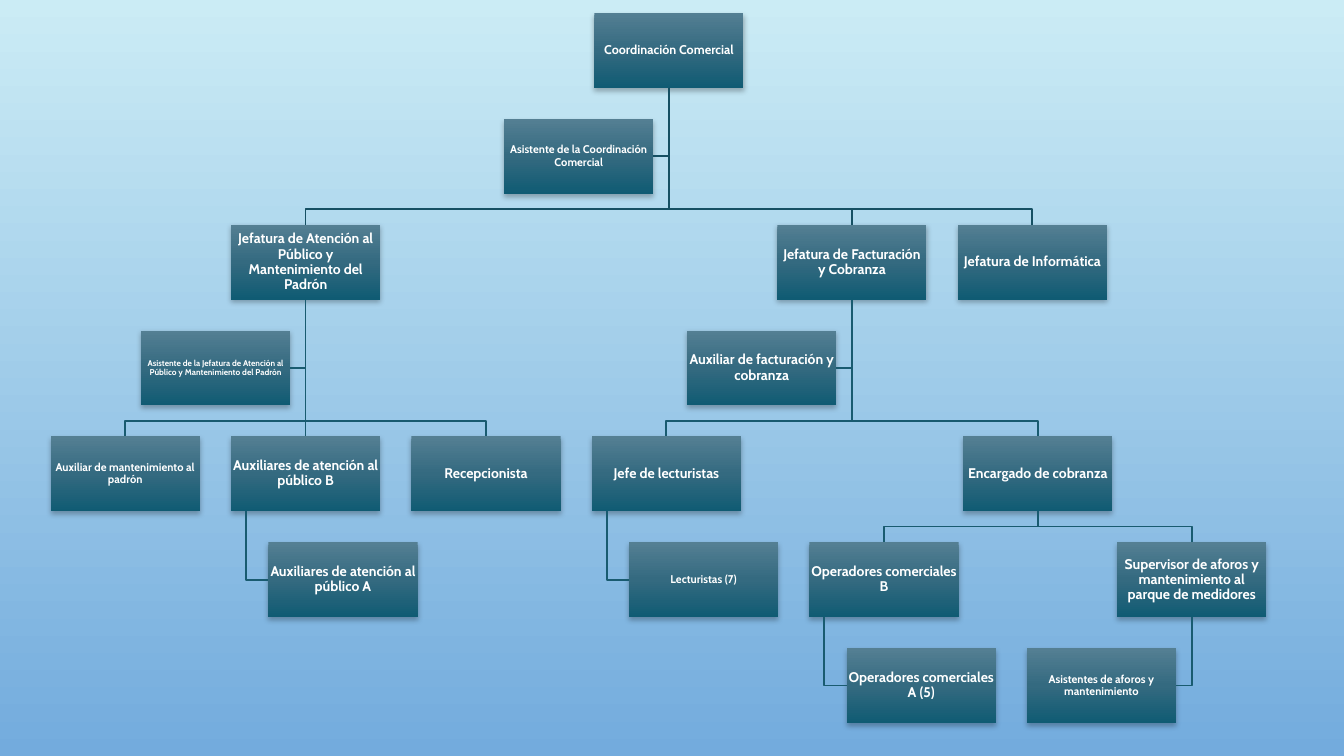
"""Build the organisation chart of the Coordinación Comercial on one slide."""
from copy import deepcopy

from lxml import etree
from pptx import Presentation
from pptx import util as u
from pptx.dml.color import RGBColor
from pptx.enum import shapes, text
from pptx.oxml.ns import qn


def rgb(code):
    """Turn a hex string into a colour."""
    return RGBColor.from_string(code)


def gradient(fill, element, stops):
    """Fill from top to bottom with (position, colour) stops."""
    fill.gradient()
    fill.gradient_angle = 270
    stop_list = element.find(".//" + qn("a:gsLst"))
    for _ in stops[2:]:
        stop_list.insert(1, deepcopy(stop_list[0]))
    for stop, (position, colour) in zip(fill.gradient_stops, stops):
        stop.position = position
        stop.color.rgb = rgb(colour)


class OrgChart:
    """Draw the posts of an organisation chart and the lines between them."""

    FONT = "Cabin"
    WIDTH, HEIGHT = u.Pt(106.6), u.Pt(53.4)
    ROW_STEP = u.Pt(75.6)
    AIDE_SHIFT = u.Pt(64.4)
    BEND = u.Pt(11.2)
    POST_STOPS = [(0, "547F93"), (0.5, "346A80"), (1, "105B73")]
    TOP_LINE, LINE = "165063", "195B70"

    def __init__(self, slide):
        """Keep the slide and paint its background."""
        self.slide = slide
        gradient(slide.background.fill, slide.element, [(0, "CBECF5"), (1, "73ABDD")])

    def post(self, label, left, top, size):
        """Draw one post with its label."""
        post = self.slide.shapes.add_shape(
            shapes.MSO_SHAPE.RECTANGLE, left, top, self.WIDTH, self.HEIGHT)
        gradient(post.fill, post.element, self.POST_STOPS)
        post.line.fill.background()
        self.shade(post)
        frame = post.text_frame
        frame.text = label
        frame.word_wrap = True
        frame.vertical_anchor = text.MSO_ANCHOR.MIDDLE
        frame.margin_left = frame.margin_right = u.Pt(0.7)
        frame.margin_top = frame.margin_bottom = u.Pt(0.7)
        paragraph = frame.paragraphs[0]
        paragraph.alignment = text.PP_ALIGN.CENTER
        paragraph.line_spacing = 0.9
        font = paragraph.runs[0].font
        font.name, font.size, font.bold = self.FONT, u.Pt(size), True
        font.color.rgb = rgb("FFFFFF")
        return post

    def shade(self, post):
        """Give a post a soft shadow below it."""
        post.shadow.inherit = False
        effects = post.element.spPr.find(qn("a:effectLst"))
        shadow = etree.SubElement(
            effects, qn("a:outerShdw"), blurRad=str(u.Pt(4)), dist=str(u.Pt(2)),
            dir="5400000", algn="ctr", rotWithShape="0")
        black = etree.SubElement(shadow, qn("a:srgbClr"), val="000000")
        etree.SubElement(black, qn("a:alpha"), val="28000")

    def stroke(self, line, colour):
        """Style a line of the chart."""
        line.color.rgb = rgb(colour)
        line.width = u.Pt(1.25)

    def bent_line(self, colour, start, *corners):
        """Draw an open line through the given points."""
        builder = self.slide.shapes.build_freeform(*start)
        builder.add_line_segments(corners, close=False)
        branch = builder.convert_to_shape()
        branch.fill.background()
        branch.shadow.inherit = False
        self.stroke(branch.line, colour)

    def straight_line(self, colour, chief, post):
        """Join a chief to the post directly below."""
        link = self.slide.shapes.add_connector(shapes.MSO_CONNECTOR.STRAIGHT, 0, 0, 0, 0)
        link.begin_connect(chief, 2)
        link.end_connect(post, 0)
        self.stroke(link.line, colour)
        etree.SubElement(link.element.spPr, qn("a:effectLst"))

    def report(self, chief, label, left, rows=2, size=10, colour=LINE):
        """Place a post some rows below its chief."""
        post = self.post(label, u.Pt(left), chief.top + rows * self.ROW_STEP, size)
        chief_x = chief.left + self.WIDTH // 2
        post_x = post.left + self.WIDTH // 2
        if chief_x == post_x:
            self.straight_line(colour, chief, post)
        else:
            bend_y = post.top - self.BEND
            self.bent_line(colour, (chief_x, chief.top + self.HEIGHT),
                           (chief_x, bend_y), (post_x, bend_y), (post_x, post.top))
        return post

    def aide(self, chief, label, size=10, colour=LINE):
        """Place an assistant to the left of the line under its chief."""
        post = self.post(label, chief.left - self.AIDE_SHIFT, chief.top + self.ROW_STEP, size)
        self.side_line(colour, chief, chief.left + self.WIDTH // 2, post, post.left + self.WIDTH)

    def hanging(self, chief, label, size=10):
        """Hang a post from the lower left of its chief."""
        post = self.post(label, chief.left + self.WIDTH // 4, chief.top + self.ROW_STEP, size)
        self.side_line(self.LINE, chief, chief.left + self.WIDTH // 10, post, post.left)

    def side_line(self, colour, chief, stem_x, post, side_x):
        """Drop from a chief and turn into the side of a post."""
        middle = post.top + self.HEIGHT // 2
        self.bent_line(colour, (stem_x, chief.top + self.HEIGHT), (stem_x, middle), (side_x, middle))


def main():
    """Build and save the slide."""
    deck = Presentation()
    deck.slide_width, deck.slide_height = u.Pt(960), u.Pt(540)
    chart = OrgChart(deck.slides.add_slide(deck.slide_layouts[6]))
    top = chart.TOP_LINE

    coordination = chart.post("Coordinación Comercial", u.Pt(424.5), u.Pt(9.4), 9)
    chart.aide(coordination, "Asistente de la Coordinación Comercial", 8, top)
    public = chart.report(
        coordination, "Jefatura de Atención al Público y Mantenimiento del Padrón",
        165, colour=top)
    billing = chart.report(coordination, "Jefatura de Facturación y Cobranza", 555.2, colour=top)
    chart.report(coordination, "Jefatura de Informática", 684.1, colour=top)

    chart.aide(
        public, "Asistente de la Jefatura de Atención al Público y Mantenimiento del Padrón", 6)
    chart.report(public, "Auxiliar de mantenimiento al padrón", 36.2, size=8)
    attendants = chart.report(public, "Auxiliares de atención al público B", 165)
    chart.report(public, "Recepcionista", 293.8)
    chart.hanging(attendants, "Auxiliares de atención al público A")

    chart.aide(billing, "Auxiliar de facturación y cobranza")
    readers = chart.report(billing, "Jefe de lecturistas", 422.7)
    collection = chart.report(billing, "Encargado de cobranza", 688)
    chart.hanging(readers, "Lecturistas (7)", 8)

    operators = chart.report(collection, "Operadores comerciales B", 578.1, rows=1)
    gauging = chart.report(
        collection, "Supervisor de aforos y mantenimiento al parque de medidores", 797.9, rows=1)
    chart.hanging(operators, "Operadores comerciales A (5)")
    chart.aide(gauging, "Asistentes de aforos y mantenimiento", 8)

    deck.save("out.pptx")


if __name__ == "__main__":
    main()
